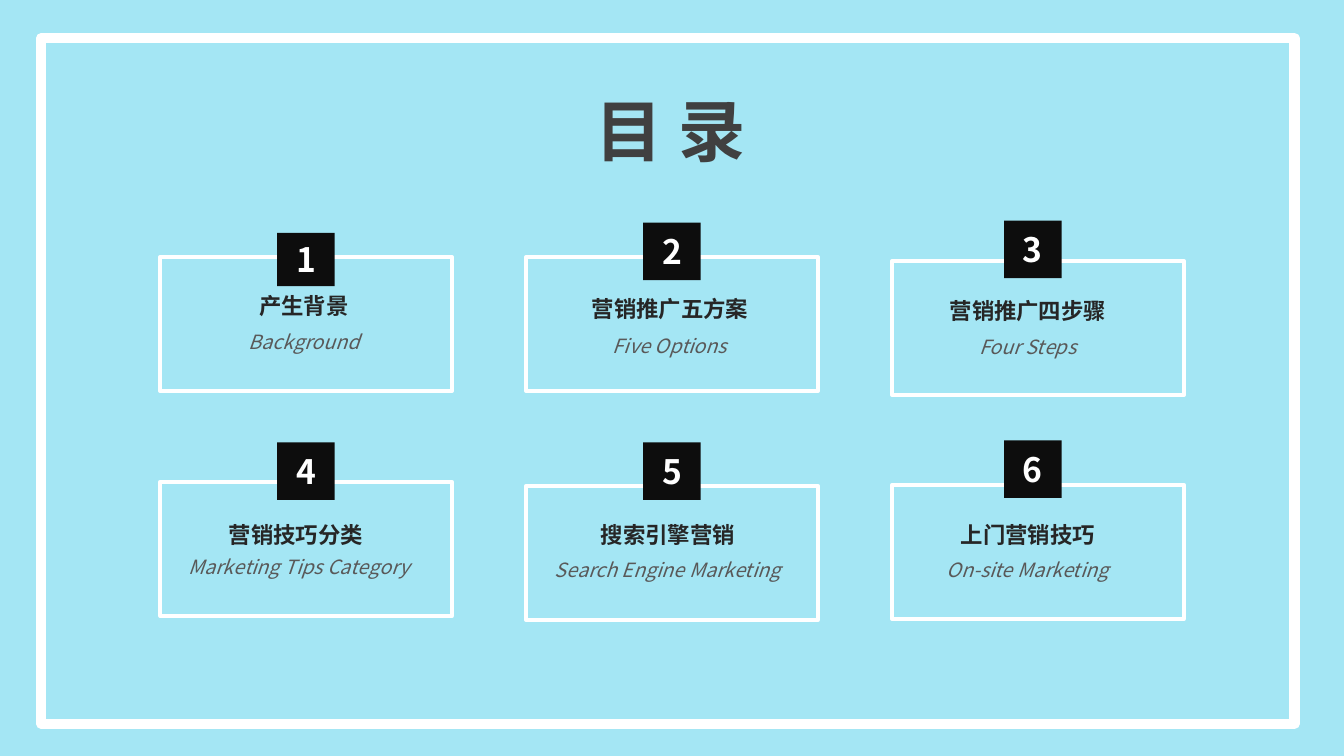
from dataclasses import dataclass
from typing import NamedTuple, Optional

import pptx
import pptx.dml.color
import pptx.enum.shapes
import pptx.enum.text
import pptx.oxml.ns
import pptx.util
from lxml import etree

RGBColor = pptx.dml.color.RGBColor
SKY = RGBColor(0xA4, 0xE6, 0xF4)
WHITE = RGBColor(0xFF, 0xFF, 0xFF)
BADGE_BLACK = RGBColor(0x0D, 0x0D, 0x0D)
HEADING_GREY = RGBColor(0x40, 0x40, 0x40)
TOPIC_GREY = RGBColor(0x26, 0x26, 0x26)
ENGLISH_GREY = RGBColor(0x59, 0x59, 0x59)

FONT = "Noto Sans CJK SC"
CELL = pptx.util.Inches(0.01)
SLIDE_COLUMNS, SLIDE_ROWS = 1333, 750
BOX_LEFT, BOX_PITCH = 159, 363
BOX_WIDTH, BOX_HEIGHT = 289, 133
BADGE_LEFTS = (275, 638, 996)
BADGE_SIDE = 57
CAPTION_WIDTH, TOPIC_HEIGHT, ENGLISH_HEIGHT = 269, 37, 34
CARDS_PER_ROW = 3

RECTANGLE = pptx.enum.shapes.MSO_SHAPE.RECTANGLE
ROUNDED = pptx.enum.shapes.MSO_SHAPE.ROUNDED_RECTANGLE
CENTER = pptx.enum.text.PP_ALIGN.CENTER
LEFT = pptx.enum.text.PP_ALIGN.LEFT


class Area(NamedTuple):
    """Left, top, width and height in grid cells."""
    column: int
    row: int
    columns: int
    rows: int

    def lengths(self) -> tuple[int, ...]:
        return tuple(cells * CELL for cells in self)


class Spot(NamedTuple):
    column: int
    row: int


class TextStyle(NamedTuple):
    size: int
    color: RGBColor
    bold: bool = False
    italic: bool = False
    align: int = CENTER


@dataclass(frozen=True)
class Card:
    topic: str
    english: str
    box_row: int
    badge_row: int
    topic_spot: Spot
    english_spot: Spot
    badge_height: int = BADGE_SIDE


HEADING = TextStyle(48, HEADING_GREY, bold=True, align=LEFT)
NUMBER = TextStyle(24, WHITE, bold=True)
TOPIC = TextStyle(16, TOPIC_GREY, bold=True)
ENGLISH = TextStyle(14, ENGLISH_GREY, italic=True)

CARDS = (
    Card("产生背景", "Background", 255, 231, Spot(167, 285), Spot(167, 322), 53),
    Card("营销推广五方案", "Five Options", 255, 221, Spot(530, 288), Spot(530, 326)),
    Card("营销推广四步骤", "Four Steps", 259, 219, Spot(885, 290), Spot(885, 327)),
    Card("营销技巧分类", "Marketing Tips Category", 478, 439, Spot(159, 512), Spot(162, 546)),
    Card("搜索引擎营销", "Search Engine Marketing", 482, 439, Spot(528, 512), Spot(528, 549)),
    Card("上门营销技巧", "On-site Marketing", 481, 437, Spot(885, 512), Spot(885, 549)),
)


def write(frame, text: str, style: TextStyle) -> None:
    paragraph = frame.paragraphs[0]
    paragraph.text = text
    paragraph.alignment = style.align
    font = paragraph.font
    font.name = FONT
    font.size = pptx.util.Pt(style.size)
    font.bold = style.bold
    font.italic = style.italic
    font.color.rgb = style.color
    # Chinese characters take their typeface from a:ea
    properties = paragraph._p.pPr.find(pptx.oxml.ns.qn("a:defRPr"))
    east_asian = etree.SubElement(properties, pptx.oxml.ns.qn("a:ea"))
    east_asian.set("typeface", FONT)


def add_text(shapes, area: Area, text: str, style: TextStyle) -> None:
    frame = shapes.add_textbox(*area.lengths()).text_frame
    frame.word_wrap = True
    frame.auto_size = pptx.enum.text.MSO_AUTO_SIZE.SHAPE_TO_FIT_TEXT
    write(frame, text, style)


def add_block(shapes, preset: int, area: Area, fill: Optional[RGBColor] = None,
              line_width: float = 0):
    """Add a filled block, or a white outline where a line width is given."""
    block = shapes.add_shape(preset, *area.lengths())
    block.shadow.inherit = False
    if preset == ROUNDED:
        block.adjustments[0] = 0
    if fill is None:
        block.fill.background()
    else:
        block.fill.solid()
        block.fill.fore_color.rgb = fill
    if line_width:
        block.line.color.rgb = WHITE
        block.line.width = pptx.util.Pt(line_width)
    else:
        block.line.fill.background()
    return block


def add_card(shapes, index: int, card: Card) -> None:
    column = index % CARDS_PER_ROW
    panel = shapes.add_group_shape().shapes
    add_block(panel, ROUNDED, Area(BOX_LEFT + column * BOX_PITCH, card.box_row,
                                   BOX_WIDTH, BOX_HEIGHT), line_width=3)
    badge = add_block(panel, ROUNDED, Area(BADGE_LEFTS[column], card.badge_row,
                                           BADGE_SIDE, card.badge_height), BADGE_BLACK)
    badge.text_frame.vertical_anchor = pptx.enum.text.MSO_ANCHOR.MIDDLE
    write(badge.text_frame, str(index + 1), NUMBER)

    captions = shapes.add_group_shape().shapes
    add_text(captions, Area(*card.english_spot, CAPTION_WIDTH, ENGLISH_HEIGHT),
             card.english, ENGLISH)
    add_text(captions, Area(*card.topic_spot, CAPTION_WIDTH, TOPIC_HEIGHT),
             card.topic, TOPIC)


def main() -> None:
    deck = pptx.Presentation()
    deck.slide_width = SLIDE_COLUMNS * CELL
    deck.slide_height = SLIDE_ROWS * CELL
    slide = deck.slides.add_slide(deck.slide_layouts[6])
    slide.background.fill.solid()
    slide.background.fill.fore_color.rgb = SKY

    add_block(slide.shapes, RECTANGLE, Area(41, 38, 1243, 680), line_width=7.25)
    add_text(slide.shapes, Area(581, 84, 244, 91), "目 录", HEADING)
    for index, card in enumerate(CARDS):
        add_card(slide.shapes, index, card)
    deck.save("out.pptx")


if __name__ == "__main__":
    main()
